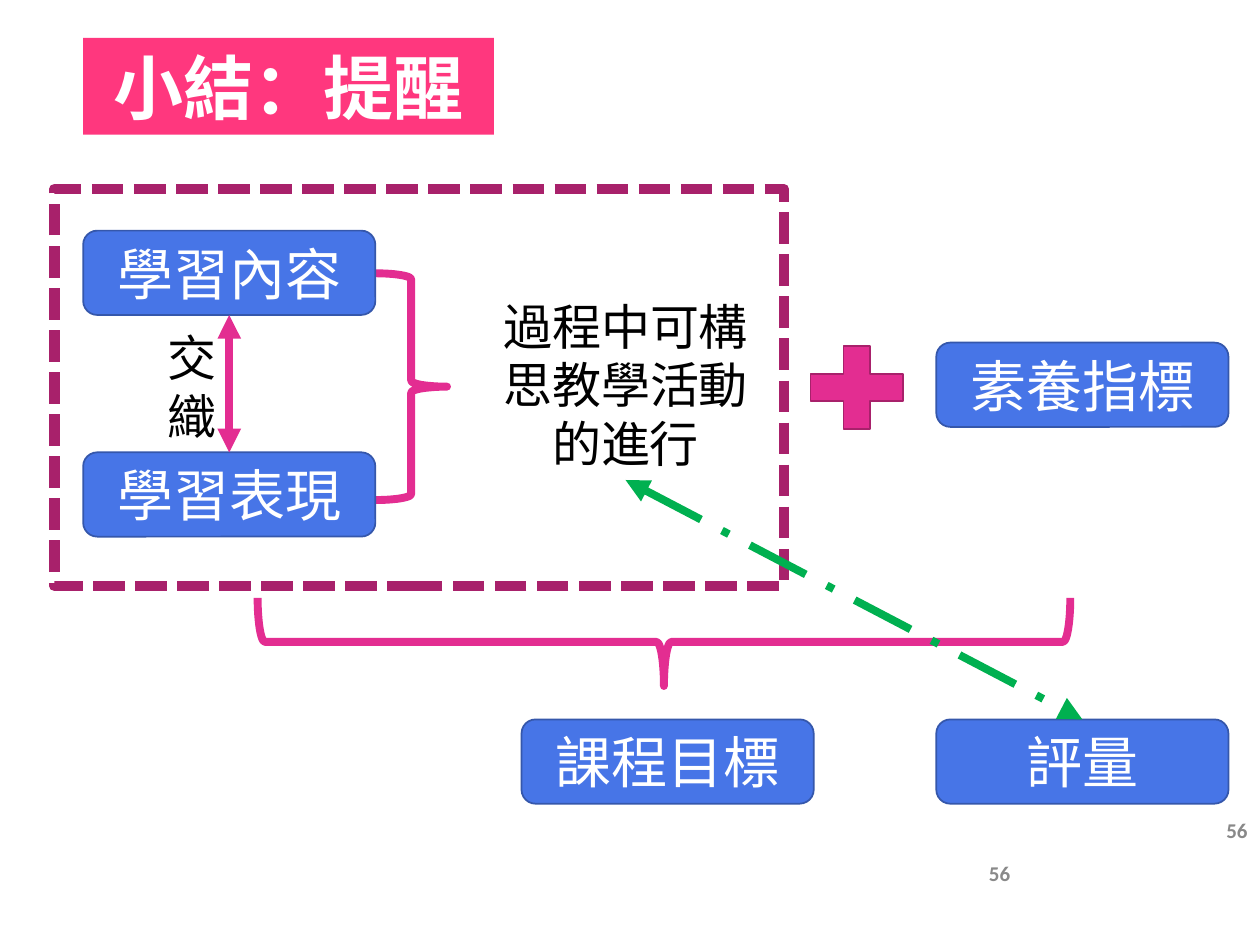
import pptx
import pptx.util
import pptx.dml.color
import pptx.enum.dml
import pptx.enum.shapes
import pptx.enum.text
import pptx.oxml
import pptx.oxml.ns

Pt = pptx.util.Pt
SHAPE = pptx.enum.shapes.MSO_SHAPE
DASH = pptx.enum.dml.MSO_LINE
ALIGN = pptx.enum.text.PP_ALIGN
ANCHOR = pptx.enum.text.MSO_ANCHOR
TOP, BOTTOM = 0, 2

COLORS = {
    "title": "FF377E", "card": "4775E7", "card_edge": "3557AB",
    "pink": "E32D91", "plum": "A8216B", "green": "00B050",
    "white": "FFFFFF", "black": "000000", "gray": "898989",
}

TITLE = ("小結：提醒", (47.5, 21.6, 234.7, 55.4))
CARD_SIZE = (167, 48.2)
LEFT, MIDDLE, RIGHT = 47.5, 298, 535
CARDS = [
    ("學習內容", LEFT, 131.8),
    ("學習表現", LEFT, 258.5),
    ("素養指標", RIGHT, 195.8),
    ("評量", RIGHT, 411.1),
    ("課程目標", MIDDLE, 411.1),
]
# text, box, size, bold, color, alignment
NOTES = [
    ("56", (558, 488.2, 162, 28.8), 12, True, "gray", ALIGN.LEFT),
    ("56", (558, 463.7, 162, 28.8), 12, True, "gray", ALIGN.RIGHT),
    ("交織", (88.6, 183.6, 31, 74.9), 28, False, "black", ALIGN.LEFT),
    ("過程中可構思教學活動的進行", (267.1, 165.6, 180.7, 108.7), 28, False,
     "black", ALIGN.CENTER),
]
# preset, box, rotation, fill, line color, line width, dash
FIGURES = [
    (SHAPE.RIGHT_BRACE, (214.5, 156.2, 41, 129.6), 0, None, "pink", 4.5, None),
    (SHAPE.RECTANGLE, (31, 108, 416.9, 226.8), 0, None, "plum", 6, DASH.SQUARE_DOT),
    (SHAPE.MATH_PLUS, (453.6, 189.4, 72, 64.1), 0, "pink", "plum", 1, None),
    (SHAPE.LEFT_BRACE, (354.2, 134.6, 50.4, 464.4), 270, None, "pink", 4.5, None),
]


def rgb(name):
    return pptx.dml.color.RGBColor.from_string(COLORS[name])


def lengths(box):
    return [Pt(value) for value in box]


def write(shape, text, size, color, align, anchor, bold=False, font="Calibri"):
    frame = shape.text_frame
    frame.word_wrap = True
    frame.auto_size = pptx.enum.text.MSO_AUTO_SIZE.NONE
    frame.vertical_anchor = anchor
    para = frame.paragraphs[0]
    para.text = text
    para.alignment = align
    para.font.name = font
    para.font.size = Pt(size)
    para.font.bold = bold
    para.font.color.rgb = rgb(color)


def add_figure(page, preset, box, rotation, fill, edge, width, dash):
    shape = page.shapes.add_shape(preset, *lengths(box))
    shape.shadow.inherit = False
    shape.rotation = rotation
    if fill:
        shape.fill.solid()
        shape.fill.fore_color.rgb = rgb(fill)
    else:
        shape.fill.background()
    shape.line.color.rgb = rgb(edge)
    shape.line.width = Pt(width)
    if dash:
        shape.line.dash_style = dash
    return shape


def add_double_arrow(page, start, end, color, dash=None):
    """Join the bottom of one box to the top of another."""
    arrow = page.shapes.add_connector(pptx.enum.shapes.MSO_CONNECTOR.STRAIGHT, 0, 0, 0, 0)
    arrow.begin_connect(start, BOTTOM)
    arrow.end_connect(end, TOP)
    arrow.line.color.rgb = rgb(color)
    arrow.line.width = Pt(4.5)
    if dash:
        arrow.line.dash_style = dash
    line = arrow.line._get_or_add_ln()
    for tag in ("a:headEnd", "a:tailEnd"):
        pptx.oxml.ns.qn(tag)
        end_mark = line.makeelement(pptx.oxml.ns.qn(tag), {"type": "triangle"})
        line.append(end_mark)
    properties = arrow._element.spPr
    properties.append(properties.makeelement(pptx.oxml.ns.qn("a:effectLst"), {}))


def main():
    deck = pptx.Presentation()
    deck.slide_width, deck.slide_height = Pt(720), Pt(540)
    page = deck.slides.add_slide(deck.slide_layouts[5])

    title = page.shapes.title
    text, box = TITLE
    title.left, title.top, title.width, title.height = lengths(box)
    title.fill.solid()
    title.fill.fore_color.rgb = rgb("title")
    write(title, text, 40, "white", ALIGN.CENTER, ANCHOR.TOP, True, "Noto Sans CJK SC")

    notes = {}
    for text, box, size, bold, color, align in NOTES:
        note = page.shapes.add_textbox(*lengths(box))
        write(note, text, size, color, align, ANCHOR.TOP, bold)
        notes[text] = note

    for figure in FIGURES:
        add_figure(page, *figure)

    cards = {}
    for text, left, top in CARDS:
        card = add_figure(page, SHAPE.ROUNDED_RECTANGLE, (left, top, *CARD_SIZE),
                          0, "card", "card_edge", 1, None)
        write(card, text, 32, "white", ALIGN.CENTER, ANCHOR.MIDDLE)
        cards[text] = card

    add_double_arrow(page, cards["學習內容"], cards["學習表現"], "pink")
    add_double_arrow(page, notes["過程中可構思教學活動的進行"], cards["評量"], "green",
                     DASH.LONG_DASH_DOT)
    deck.save("out.pptx")


if __name__ == "__main__":
    main()
